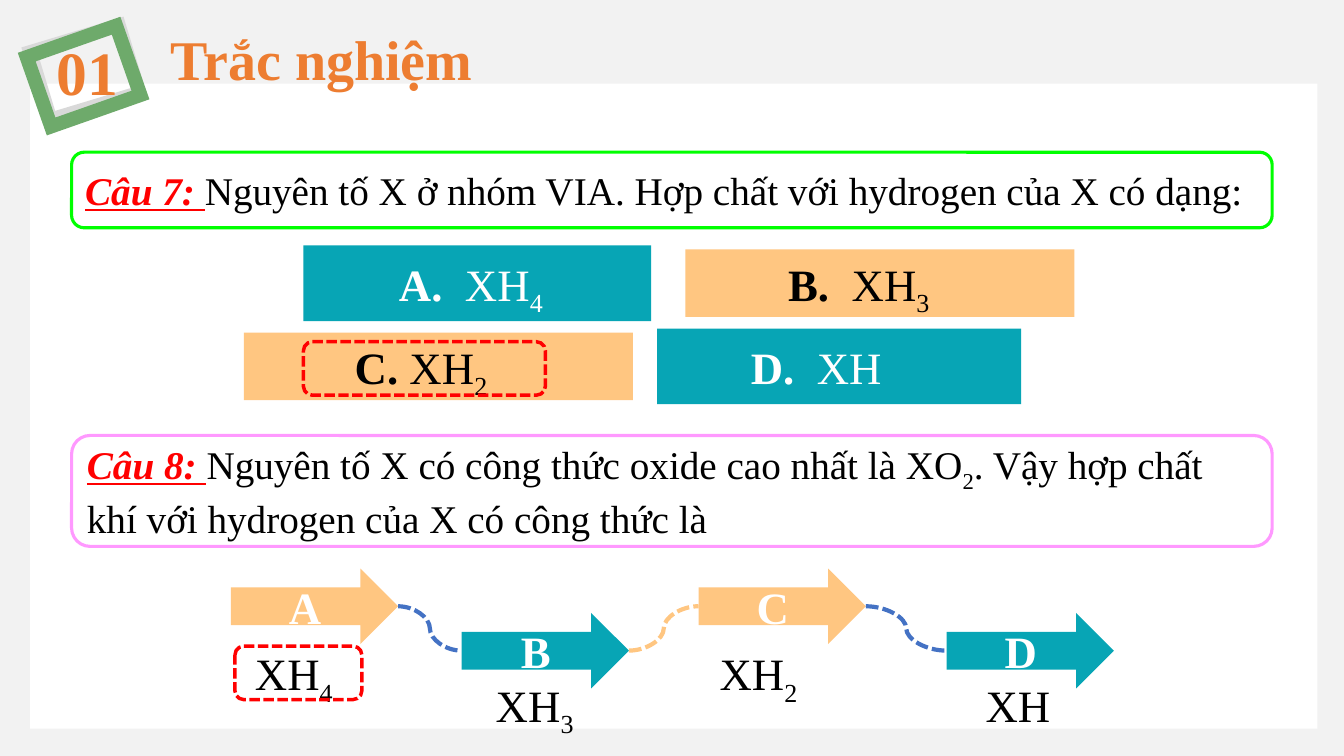
from pptx import Presentation
from pptx import util as u
from pptx.dml.color import RGBColor
from pptx.enum import dml, shapes, text
from pptx.oxml import xmlchemy as xc

GREY = RGBColor(0xF2, 0xF2, 0xF2)
SHADE = RGBColor(0xD9, 0xD9, 0xD9)
MOSS = RGBColor(0x6E, 0xAA, 0x6B)
ORANGE = RGBColor(0xED, 0x7D, 0x31)
WHITE = RGBColor(0xFF, 0xFF, 0xFF)
BLACK = RGBColor(0, 0, 0)
RED = RGBColor(0xFF, 0, 0)
LIME = RGBColor(0, 0xFF, 0)
PINK = RGBColor(0xFF, 0x99, 0xFF)
TEAL = RGBColor(0x07, 0xA5, 0xB5)
PEACH = RGBColor(0xFF, 0xC6, 0x81)
BLUE = RGBColor(0x44, 0x72, 0xC4)
FONT = "Times New Roman"
KIND = shapes.MSO_SHAPE
DASH = dml.MSO_LINE.SQUARE_DOT

deck = Presentation()
deck.slide_width, deck.slide_height = u.Inches(13.333), u.Inches(7.5)
COL, ROW = deck.slide_width / 100, deck.slide_height / 100
slide = deck.slides.add_slide(deck.slide_layouts[5])


def cells(box, x, y, w, h):
    return (round((box[0] + x) * COL), round((box[1] + y) * ROW),
            round(w * COL), round(h * ROW))


def draw(kind, place, fill=None, line=None, width=1):
    item = slide.shapes.add_shape(kind, *place)
    item.shadow.inherit = False
    if fill is None:
        item.fill.background()
    else:
        item.fill.solid()
        item.fill.fore_color.rgb = fill
    if line is None:
        item.line.fill.background()
    else:
        item.line.color.rgb = line
        item.line.width = u.Pt(width)
    return item


def write(frame, runs, size, color, align=text.PP_ALIGN.LEFT, bold=None):
    para = frame.paragraphs[0]
    para.alignment = align
    font = para.font
    font.name, font.size, font.bold = FONT, u.Pt(size), bold
    font.color.rgb = color
    for words, style in runs:
        run = para.add_run()
        run.text = words
        if style == "bold":
            run.font.bold = True
        elif style == "sub":
            run.font._element.set("baseline", "-25000")
        elif style == "lead":
            run.font.bold = run.font.italic = run.font.underline = True
            run.font.color.rgb = RED
        elif style == "plain":
            run.font.color.rgb = color


def label(place, runs, size, color, wrap=True, bold=None):
    frame = slide.shapes.add_textbox(*place).text_frame
    frame.word_wrap = wrap
    write(frame, runs, size, color, bold=bold)


def mark(place):
    ring = draw(KIND.ROUNDED_RECTANGLE, place, line=RED, width=2.5)
    ring.line.dash_style = DASH


def header(box):
    panel = draw(KIND.RECTANGLE, cells(box, 2.25, 11.07, 95.78, 85.33), WHITE)
    slide.shapes._spTree.insert(2, panel._element)
    for color, turn, part in ((SHADE, 343.2, (2.85, 4.93, 6.9, 9.33)),
                              (MOSS, 340.6, (2.7, 5.2, 7.05, 9.73))):
        frame = draw(KIND.RECTANGLE, cells(box, *part), line=color, width=10)
        frame.rotation = turn
        edge = frame.line._get_or_add_ln()
        edge.append(xc.OxmlElement("a:miter"))
    title = slide.shapes.title
    title.left, title.top, title.width, title.height = cells(
        box, 11.93, 2.53, 24.23, 10.27)
    frame = title.text_frame
    frame.word_wrap = False
    frame.auto_size = text.MSO_AUTO_SIZE.NONE
    frame.vertical_anchor = text.MSO_ANCHOR.TOP
    write(frame, [("Trắc nghiệm", "")], 40, ORANGE, bold=True)
    label(cells(box, 3.45, 3.87, 6.15, 11.2), [("01", "")], 44, ORANGE,
          wrap=False, bold=True)


def question(box, color, runs):
    card = draw(KIND.ROUNDED_RECTANGLE, cells(box, 0, 0, *box[2:]),
                WHITE, color, 2.25)
    frame = card.text_frame
    frame.word_wrap = True
    frame.vertical_anchor = text.MSO_ANCHOR.MIDDLE
    write(frame, runs, 28, BLACK)


def options(box):
    items = (
        ("A.  ", "4", 0, 4.43, 25.88, 10.8, 19.5, TEAL),
        ("B.  ", "3", 0, 32.85, 28.95, 39.75, 19.8, PEACH),
        ("C. ", "2", 1, 0, 28.95, 7.5, 27.6, PEACH),
        ("D.  ", "", 1, 30.75, 27.08, 36.98, 25.35, TEAL))
    for name, sub, row, x, w, left, span, fill in items:
        mid = 5.07 + 11 * row
        high, ink = (10, WHITE) if fill == TEAL else (8.93, BLACK)
        draw(KIND.RECTANGLE, cells(box, x, mid - high / 2, w, high), fill)
        runs = [(name, "bold"), ("XH", "")] + ([(sub, "sub")] if sub else [])
        label(cells(box, left, mid - 4.2, span, 8.53), runs, 32, ink)
    mark(cells(box, 4.43, 12.8, 18, 7.07))


def chain(box):
    wide, high, drop = 12.45, 10, 5.87
    items = (("A", "4", 0, 1.05, 9.83), ("B", "3", 17.17, 18.97, 9.45),
             ("C", "2", 34.8, 35.62, 8.4), ("D", "", 53.25, 55.42, 9.45))
    for i, (name, sub, x, left, span) in enumerate(items):
        low = i % 2
        arrow = draw(KIND.RIGHT_ARROW, cells(box, x, drop * low, wide, high),
                     TEAL if low else PEACH)
        arrow.text_frame.vertical_anchor = text.MSO_ANCHOR.MIDDLE
        write(arrow.text_frame, [(name, "")], 32, WHITE,
              text.PP_ALIGN.CENTER, True)
        runs = [("XH", "")] + ([(sub, "sub")] if sub else [])
        label(cells(box, left, 9.6 + 4.13 * low, span, 8.53), runs, 32, BLACK)
    for i, (here, after) in enumerate(zip(items, items[1:])):
        low = i % 2
        start = cells(box, here[2] + wide, drop * low + high / 2, 0, 0)[:2]
        end = cells(box, after[2], drop * (1 - low) + high / 2, 0, 0)[:2]
        link = slide.shapes.add_connector(
            shapes.MSO_CONNECTOR.CURVE, *start, *end)
        link.line.color.rgb = PEACH if low else BLUE
        link.line.width = u.Pt(3)
        link.line.dash_style = DASH
        link._element.spPr.append(xc.OxmlElement("a:effectLst"))
    mark(cells(box, 0.3, 10.27, 9.45, 7.07))


def main():
    slide.background.fill.solid()
    slide.background.fill.fore_color.rgb = GREY
    header((0, 0, 100, 100))
    question((5.33, 20.13, 89.33, 10), LIME, [
        ("Câu 7: ", "lead"),
        ("Nguyên tố X ở nhóm VIA. Hợp chất với hydrogen của X có dạng:",
         "plain")])
    options((18.15, 32.4, 61.8, 21.1))
    question((5.33, 57.6, 89.33, 14.67), PINK, [
        ("Câu 8: ", "lead"),
        ("Nguyên tố X có công thức oxide cao nhất là XO", "plain"),
        ("2", "sub"),
        (". Vậy hợp chất khí với hydrogen của X có công thức là", "plain")])
    chain((17.18, 75.2, 65.7, 22.3))
    deck.save("out.pptx")


if __name__ == "__main__":
    main()
